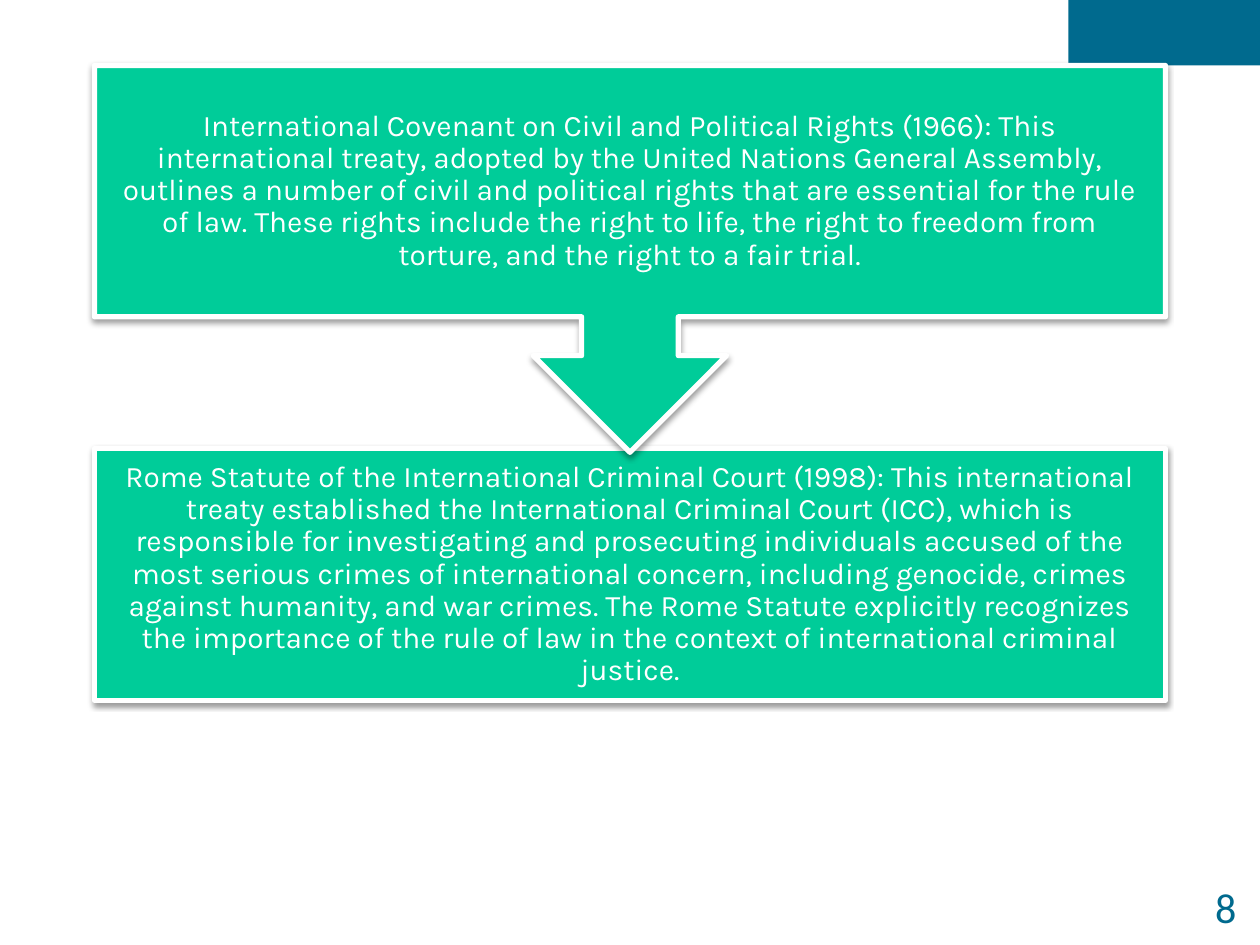
from lxml import etree
from pptx import Presentation
from pptx.dml.color import RGBColor
from pptx.enum.shapes import MSO_SHAPE
from pptx.enum.text import MSO_ANCHOR, PP_ALIGN
from pptx.oxml import parse_xml
from pptx.oxml.ns import qn
from pptx.util import Inches, Pt

RECTANGLE = MSO_SHAPE.RECTANGLE
ARROW_CALLOUT = MSO_SHAPE.DOWN_ARROW_CALLOUT
MIDDLE = MSO_ANCHOR.MIDDLE
CENTER = PP_ALIGN.CENTER
RIGHT = PP_ALIGN.RIGHT

BLUE = RGBColor(0x00, 0x6A, 0x8E)
GREEN = RGBColor(0x00, 0xCC, 0x99)
WHITE = RGBColor(0xFF, 0xFF, 0xFF)

SHADOW = (
    '<a:outerShdw xmlns:a="http://schemas.openxmlformats.org/drawingml/2006/main" '
    'blurRad="39370" dist="20320" dir="5400000" rotWithShape="0">'
    '<a:srgbClr val="000000"><a:alpha val="38000"/></a:srgbClr></a:outerShdw>'
)

TREATIES = [
    (RECTANGLE, 3.56, 2,
     "Rome Statute of the International Criminal Court (1998): This international "
     "treaty established the International Criminal Court (ICC), which is responsible "
     "for investigating and prosecuting individuals accused of the most serious crimes "
     "of international concern, including genocide, crimes against humanity, and war "
     "crimes. The Rome Statute explicitly recognizes the importance of the rule of law "
     "in the context of international criminal justice."),
    (ARROW_CALLOUT, 0.52, 3.07,
     "International Covenant on Civil and Political Rights (1966): This international "
     "treaty, adopted by the United Nations General Assembly, outlines a number of "
     "civil and political rights that are essential for the rule of law. These rights "
     "include the right to life, the right to freedom from torture, and the right to a "
     "fair trial."),
]


def write_text(shape, text, frame_format, paragraph_format, font_format):
    frame = shape.text_frame
    paragraph = frame.paragraphs[0]
    run = paragraph.add_run()
    run.text = text
    run.font.color.rgb = font_format["color"]
    font_values = {"name": font_format["name"], "size": font_format["size"]}
    for target, values in ((frame, frame_format), (paragraph, paragraph_format),
                           (run.font, font_values)):
        for name, value in values.items():
            setattr(target, name, value)


presentation = Presentation()
presentation.slide_width = Inches(10)
presentation.slide_height = Inches(7.5)
slide = presentation.slides.add_slide(presentation.slide_layouts[6])

corner_block = slide.shapes.add_shape(
    RECTANGLE, Inches(8.48), Inches(0), Inches(1.52), Inches(0.52))
corner_block.shadow.inherit = False
corner_block.fill.solid()
corner_block.fill.fore_color.rgb = BLUE
corner_block.line.fill.background()

slide_number = slide.shapes.add_textbox(
    Inches(8.93), Inches(6.98), Inches(0.98), Inches(0.43))
write_text(slide_number, "8",
           {"word_wrap": True, "vertical_anchor": MIDDLE},
           {"alignment": RIGHT, "space_after": Pt(6)},
           {"name": "Calibri", "size": Pt(24), "color": BLUE})

margins = {f"margin_{side}": Inches(0.13) for side in ("left", "top", "right", "bottom")}
for preset, top, height, text in TREATIES:
    box = slide.shapes.add_shape(
        preset, Inches(0.75), Inches(top), Inches(8.5), Inches(height))
    box.fill.solid()
    box.fill.fore_color.rgb = GREEN
    box.line.color.rgb = WHITE
    box.line.width = Pt(3)
    box.shadow.inherit = False
    effects = box.element.spPr.find(qn("a:effectLst"))
    effects.append(parse_xml(SHADOW))
    write_text(box, text,
               {"word_wrap": True, "vertical_anchor": MIDDLE, **margins},
               {"alignment": CENTER, "line_spacing": 0.9},
               {"name": "Karla", "size": Pt(17), "color": WHITE})

presentation.save("out.pptx")
